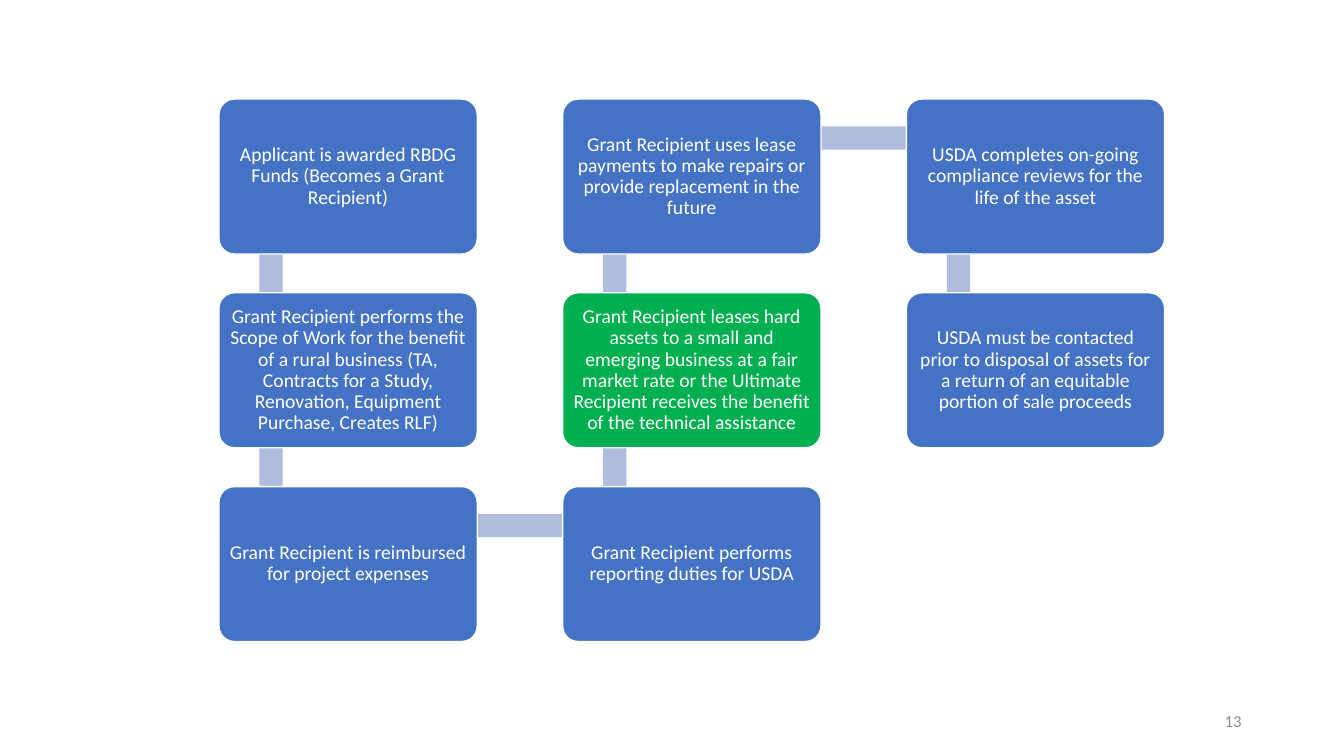
"""Build the grant process slide: a snaking chain of linked step boxes."""
from dataclasses import dataclass
from itertools import pairwise

from pptx import Presentation
from pptx.dml.color import RGBColor
from pptx.enum.shapes import MSO_SHAPE as Preset
from pptx.enum.text import MSO_ANCHOR as Anchor, PP_ALIGN as Align
from pptx.shapes.autoshape import Shape
from pptx.slide import Slide
from pptx.text.text import TextFrame
from pptx.util import Pt

BLUE, GREEN, BAR_BLUE, WHITE, GREY = "4472C4", "00B050", "B0BCDE", "FFFFFF", "8C8C8C"
GRID_LEFT, GRID_TOP = 156.4, 70.75
COLUMN_PITCH, ROW_PITCH = 245.5, 138.4
BOX_WIDTH, BOX_HEIGHT = 184.5, 110.7
JOINT_X, JOINT_Y = 37.2, 27.8
BAR_THICKNESS = 16.6
BOX_INSET = 4.2


@dataclass(frozen=True)
class Step:
    column: int
    row: int
    text: str
    fill: str = BLUE

    @property
    def left(self) -> float:
        return GRID_LEFT + self.column * COLUMN_PITCH

    @property
    def top(self) -> float:
        return GRID_TOP + self.row * ROW_PITCH


STEPS = [
    Step(0, 0, "Applicant is awarded RBDG Funds (Becomes a Grant Recipient)"),
    Step(0, 1, "Grant Recipient performs the Scope of Work for the benefit of a rural "
               "business (TA, Contracts for a Study, Renovation, Equipment Purchase, "
               "Creates RLF)"),
    Step(0, 2, "Grant Recipient is reimbursed for project expenses"),
    Step(1, 2, "Grant Recipient performs reporting duties for USDA"),
    Step(1, 1, "Grant Recipient leases hard assets to a small and emerging business at a "
               "fair market rate or the Ultimate Recipient receives the benefit of the "
               "technical assistance", GREEN),
    Step(1, 0, "Grant Recipient uses lease payments to make repairs or provide "
               "replacement in the future"),
    Step(2, 0, "USDA completes on-going compliance reviews for the life of the asset"),
    Step(2, 1, "USDA must be contacted prior to disposal of assets for a return of an "
               "equitable portion of sale proceeds"),
]


def rgb(value: str) -> RGBColor:
    """Turn a hex string into a colour."""
    return RGBColor.from_string(value)


def add_filled(page: Slide, preset: Preset, left: float, top: float,
               width: float, height: float, fill: str) -> Shape:
    """Add a flat shape without a line."""
    shape = page.shapes.add_shape(preset, Pt(left), Pt(top), Pt(width), Pt(height))
    shape.shadow.inherit = False
    shape.fill.solid()
    shape.fill.fore_color.rgb = rgb(fill)
    shape.line.fill.background()
    return shape


def write(frame: TextFrame, text: str, size: float, color: str, align: Align) -> None:
    """Fill a frame with one vertically centred paragraph."""
    frame.word_wrap = True
    frame.vertical_anchor = Anchor.MIDDLE
    para = frame.paragraphs[0]
    para.text = text
    para.alignment = align
    para.font.name = "Calibri"
    para.font.size = Pt(size)
    para.font.color.rgb = rgb(color)


def add_bar(page: Slide, start: Step, end: Step) -> None:
    """Add the bar that runs from one step's joint to the next one's."""
    across, down = end.left - start.left, end.top - start.top
    length = abs(across) + abs(down)
    center_x = start.left + JOINT_X + across / 2
    center_y = start.top + JOINT_Y + down / 2
    bar = add_filled(page, Preset.RECTANGLE, center_x - length / 2,
                     center_y - BAR_THICKNESS / 2, length, BAR_THICKNESS, BAR_BLUE)
    if down:
        bar.rotation = 90 if down > 0 else 270


def add_step(page: Slide, step: Step) -> None:
    """Add the rounded box of a step with its text."""
    box = add_filled(page, Preset.ROUNDED_RECTANGLE, step.left, step.top,
                     BOX_WIDTH, BOX_HEIGHT, step.fill)
    box.adjustments[0] = 0.1
    box.line.color.rgb = rgb(WHITE)
    box.line.width = Pt(1)
    frame = box.text_frame
    frame.margin_left = frame.margin_right = Pt(BOX_INSET)
    frame.margin_top = frame.margin_bottom = Pt(BOX_INSET)
    write(frame, step.text, 14, WHITE, Align.CENTER)
    frame.paragraphs[0].line_spacing = 0.9


def main() -> None:
    """Build and save the deck."""
    deck = Presentation()
    deck.slide_width, deck.slide_height = Pt(960), Pt(540)
    page = deck.slides.add_slide(deck.slide_layouts[6])
    for start, end in pairwise(STEPS):
        add_bar(page, start, end)
    for step in STEPS:
        add_step(page, step)
    number = page.shapes.add_textbox(Pt(678), Pt(500.5), Pt(216), Pt(28.75))
    write(number.text_frame, "13", 12, GREY, Align.RIGHT)
    deck.save("out.pptx")


if __name__ == "__main__":
    main()
